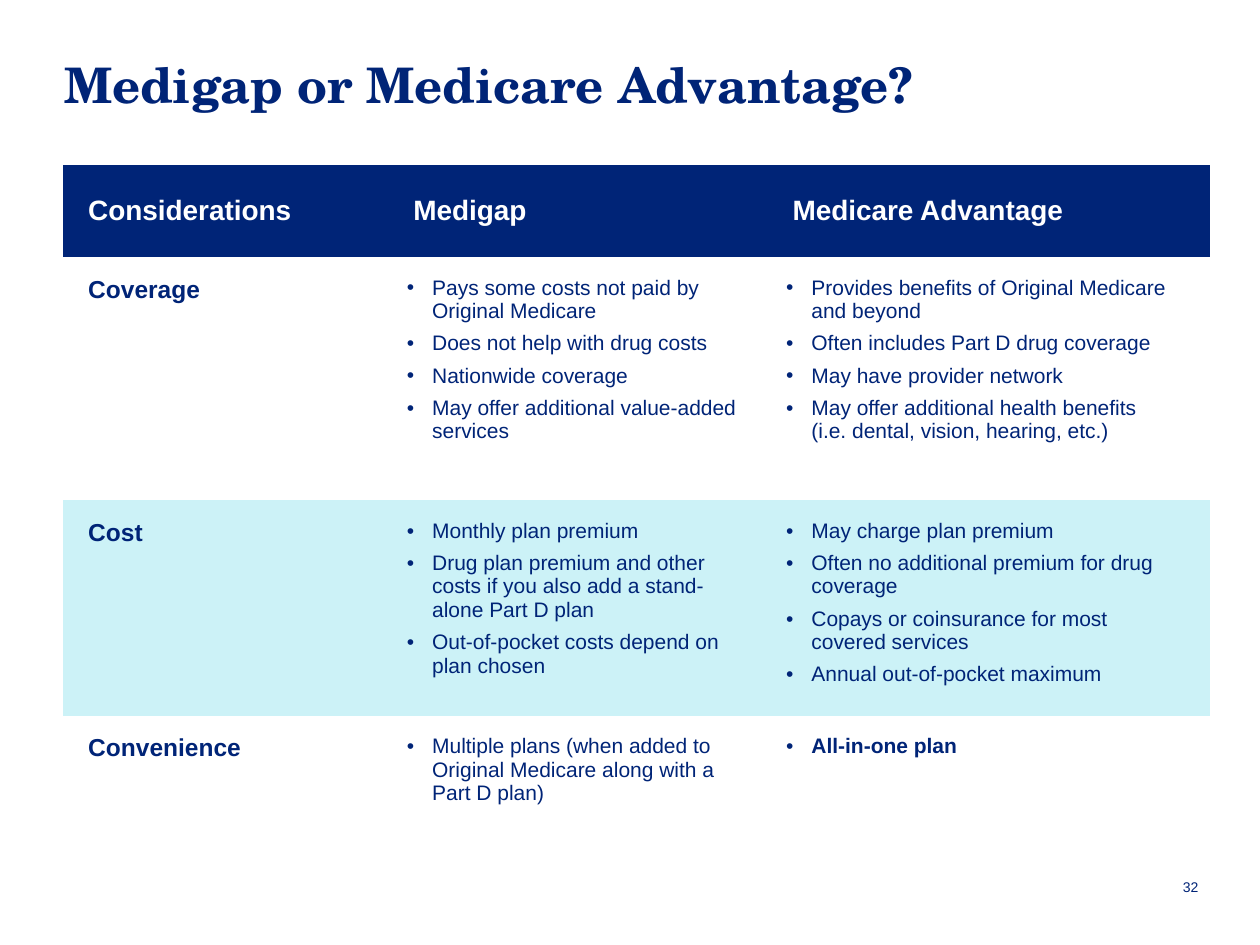
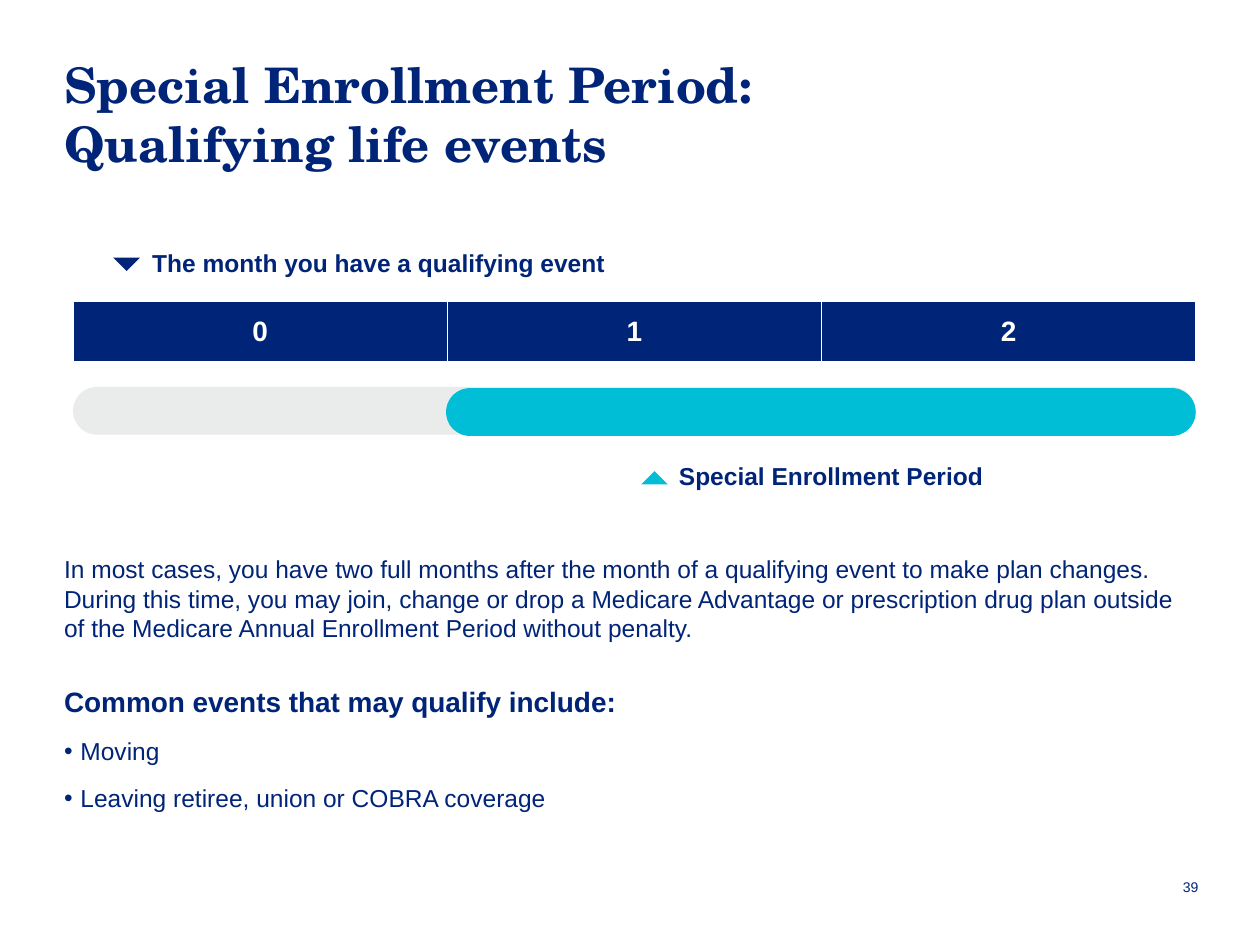
from lxml import etree
from pptx import Presentation
from pptx.dml.color import RGBColor
from pptx.enum.shapes import MSO_SHAPE
from pptx.enum.text import MSO_ANCHOR, MSO_AUTO_SIZE, PP_ALIGN
from pptx.oxml.ns import qn
from pptx.util import Inches, Pt

NAVY = RGBColor(0x00, 0x24, 0x77)
CYAN = RGBColor(0x00, 0xBE, 0xD5)
PALE_CYAN = RGBColor(0xCC, 0xF2, 0xF7)
GREY = RGBColor(0xEA, 0xEB, 0xEB)
WHITE = RGBColor(0xFF, 0xFF, 0xFF)
TITLE_FONT = "TeX Gyre Schola"
BODY_FONT = "Arial"

PLAN_HEADERS = ["Considerations", "Medigap", "Medicare Advantage"]
PLAN_ROWS = [
    ("Coverage",
     ["Pays some costs not paid by Original Medicare",
      "Does not help with drug costs",
      "Nationwide coverage",
      "May offer additional value-added services"],
     ["Provides benefits of Original Medicare and beyond",
      "Often includes Part D drug coverage",
      "May have provider network",
      "May offer additional health benefits \v(i.e. dental, vision, hearing, etc.)"]),
    ("Cost",
     ["Monthly plan premium",
      "Drug plan premium and other costs if you also add a stand-alone Part D plan",
      "Out-of-pocket costs depend on plan chosen"],
     ["May charge plan premium",
      "Often no additional premium for drug coverage",
      "Copays or coinsurance for most \vcovered services",
      "Annual out-of-pocket maximum"]),
    ("Convenience",
     ["Multiple plans (when added to Original Medicare along with a Part D plan)"],
     ["All-in-one plan"]),
]


def format_runs(p, size, color=NAVY, bold=False, font=BODY_FONT):
    for r in p.runs:
        r.font.name = font
        r.font.size = Pt(size)
        r.font.bold = bold
        r.font.color.rgb = color


def add_bullet(p, indent):
    pPr = p._p.get_or_add_pPr()
    pPr.set("marL", str(Inches(indent)))
    pPr.set("indent", str(-Inches(indent)))
    etree.SubElement(pPr, qn("a:buFont")).set("typeface", BODY_FONT)
    etree.SubElement(pPr, qn("a:buChar")).set("char", "•")


def add_text(s, box, text, size, bold=False, align=PP_ALIGN.LEFT, anchor=MSO_ANCHOR.TOP):
    tf = s.shapes.add_textbox(*map(Inches, box)).text_frame
    tf.word_wrap = True
    tf.vertical_anchor = anchor
    tf.text = text
    p = tf.paragraphs[0]
    p.alignment = align
    format_runs(p, size, bold=bold)
    return tf


def add_titled_slide(prs, title, number, title_height):
    s = prs.slides.add_slide(prs.slide_layouts[5])
    sp = s.shapes.title
    sp.left, sp.top, sp.width, sp.height = map(Inches, (0.41, 0.38, 9.2, title_height))
    tf = sp.text_frame
    tf.text = title
    tf.auto_size = MSO_AUTO_SIZE.NONE
    tf.vertical_anchor = MSO_ANCHOR.TOP
    p = tf.paragraphs[0]
    p.alignment = PP_ALIGN.LEFT
    format_runs(p, 28, bold=True, font=TITLE_FONT)
    add_text(s, (9.22, 6.83, 0.39, 0.41), str(number), 8,
             align=PP_ALIGN.RIGHT, anchor=MSO_ANCHOR.MIDDLE)
    return s


def add_plain_table(s, left, top, widths, heights):
    """Add a table without banding, with the given column widths and row heights."""
    table = s.shapes.add_table(len(heights), len(widths), Inches(left), Inches(top),
                               Inches(sum(widths)), Inches(sum(heights))).table
    table.first_row = table.horz_banding = False
    for column, width in zip(table.columns, widths):
        column.width = Inches(width)
    for row, height in zip(table.rows, heights):
        row.height = Inches(height)
    return table


def style_cell(cell, fill, left, right, vertical, anchor=MSO_ANCHOR.TOP, line=None):
    """Set fill, margins and anchor; line colours the side borders, None hides them."""
    cell.fill.solid()
    cell.fill.fore_color.rgb = fill
    cell.margin_left, cell.margin_right = Inches(left), Inches(right)
    cell.margin_top = cell.margin_bottom = Inches(vertical)
    cell.vertical_anchor = anchor
    tcPr = cell._tc.get_or_add_tcPr()
    for i, side in enumerate(("lnL", "lnR", "lnT", "lnB")):
        ln = etree.Element(qn(f"a:{side}"), w=str(Pt(1)))
        if line is not None and side in ("lnL", "lnR"):
            solid = etree.SubElement(ln, qn("a:solidFill"))
            etree.SubElement(solid, qn("a:srgbClr")).set("val", str(line))
        else:
            etree.SubElement(ln, qn("a:noFill"))
        tcPr.insert(i, ln)


def fill_bullet_cell(cell, items, bold):
    cell.text_frame.text = "\n".join(items)
    for p in cell.text_frame.paragraphs:
        p.space_after = Pt(5)
        add_bullet(p, 0.2)
        format_runs(p, 12, bold=bold)


def add_plan_table(s):
    table = add_plain_table(s, 0.5, 1.31, [2.58, 3.01, 3.51], [0.73, 1.93, 1.71, 0.91])
    for cell, header in zip(table.rows[0].cells, PLAN_HEADERS):
        cell.text = header
        style_cell(cell, NAVY, 0.2, 0.1, 0.1, MSO_ANCHOR.MIDDLE)
        format_runs(cell.text_frame.paragraphs[0], 16, WHITE, bold=True)
    for i, (topic, *plans) in enumerate(PLAN_ROWS, start=1):
        fill = WHITE if i % 2 else PALE_CYAN
        cell = table.cell(i, 0)
        cell.text = topic
        style_cell(cell, fill, 0.2, 0.1, 0.15)
        format_runs(cell.text_frame.paragraphs[0], 14, bold=True)
        for j, items in enumerate(plans, start=1):
            cell = table.cell(i, j)
            style_cell(cell, fill, 0.15, 0.1, 0.15)
            fill_bullet_cell(cell, items, bold=items == ["All-in-one plan"])


def add_month_table(s):
    table = add_plain_table(s, 0.58, 2.4, [2.97] * 3, [0.45])
    for month, cell in enumerate(table.rows[0].cells):
        cell.text = str(month)
        style_cell(cell, NAVY, 0.1, 0.1, 0.1, MSO_ANCHOR.MIDDLE, line=WHITE)
        p = cell.text_frame.paragraphs[0]
        p.alignment = PP_ALIGN.CENTER
        format_runs(p, 16, WHITE, bold=True)


def add_filled_shape(s, kind, box, fill):
    sp = s.shapes.add_shape(kind, *map(Inches, box))
    sp.shadow.inherit = False
    sp.fill.solid()
    sp.fill.fore_color.rgb = fill
    sp.line.fill.background()
    return sp


def add_period_bar(s, left, top, width, fill):
    bar = add_filled_shape(s, MSO_SHAPE.ROUNDED_RECTANGLE, (left, top, width, 0.38), fill)
    bar.adjustments[0] = 0.5


def add_pointer(s, left, top, fill, rotation):
    pointer = add_filled_shape(s, MSO_SHAPE.RIGHT_TRIANGLE, (left, top, 0.15, 0.15), fill)
    pointer.rotation = rotation


def add_event_text(s):
    tf = add_text(
        s, (0.41, 4.35, 9.08, 2.08),
        "In most cases, you have two full months after the month of a qualifying event to "
        "make plan changes. During this time, you may join, change or drop a Medicare "
        "Advantage or prescription drug plan outside of the Medicare Annual Enrollment "
        "Period without penalty.", 14)
    tf.paragraphs[0].space_after = Pt(6)
    p = tf.add_paragraph()
    p.text = "Common events that may qualify include:"
    p.space_before, p.space_after = Pt(18), Pt(6)
    format_runs(p, 16, bold=True)
    for event in ("Moving", "Leaving retiree, union or COBRA coverage"):
        p = tf.add_paragraph()
        p.text = event
        p.line_spacing = 0.9
        p.space_before = p.space_after = Pt(6)
        add_bullet(p, 0.13)
        format_runs(p, 14)


def main():
    prs = Presentation()
    prs.slide_width, prs.slide_height = Inches(10), Inches(7.5)

    s = add_titled_slide(prs, "Medigap or Medicare Advantage?", 32, 0.66)
    add_plan_table(s)

    s = add_titled_slide(prs, "Special Enrollment Period: \vQualifying life events", 39, 1.18)
    add_event_text(s)
    add_month_table(s)
    add_period_bar(s, 0.58, 3.07, 8.91, GREY)
    add_period_bar(s, 3.54, 3.08, 5.95, CYAN)
    add_pointer(s, 0.93, 1.97, NAVY, 315)
    add_text(s, (1.11, 1.92, 8.11, 0.34), "The month you have a qualifying event", 14, bold=True)
    add_pointer(s, 5.12, 3.77, CYAN, 135)
    add_text(s, (5.29, 3.61, 4.2, 0.34), "Special Enrollment Period", 14, bold=True)

    prs.save("out.pptx")


if __name__ == "__main__":
    main()
